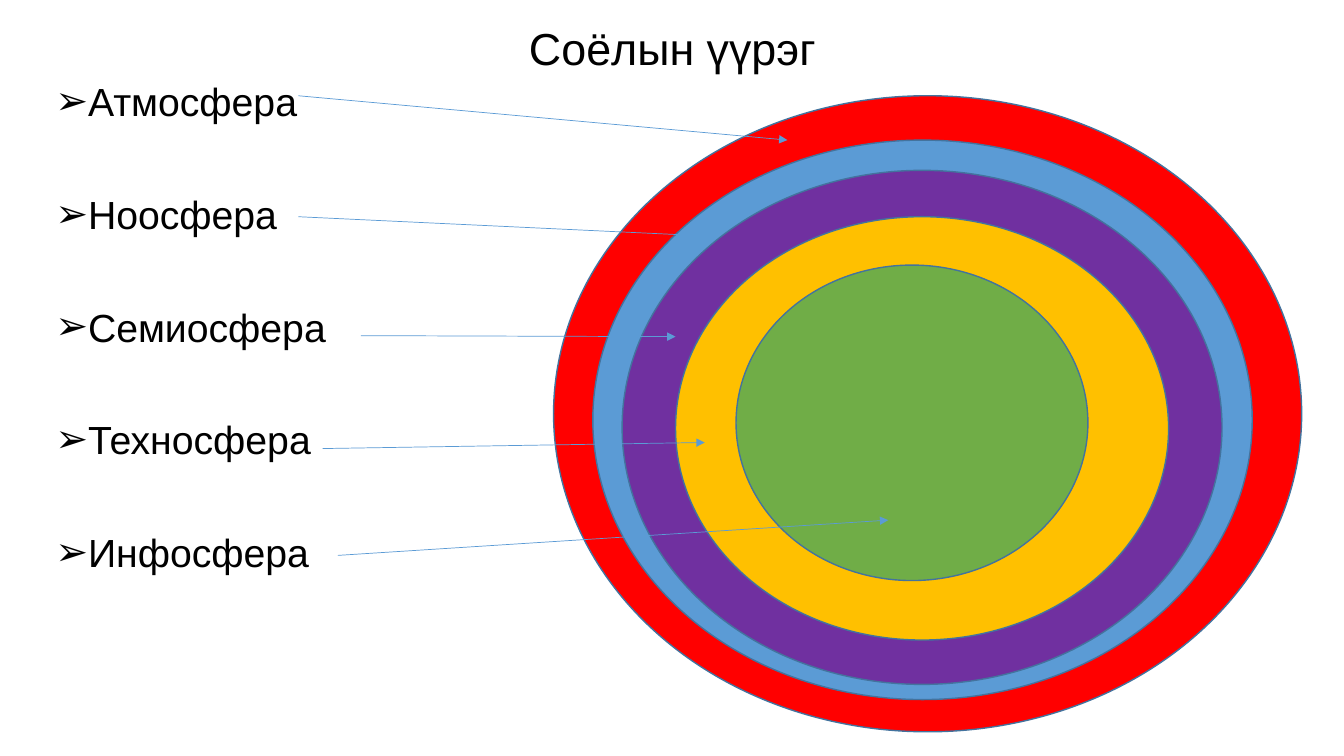
from lxml import etree
from pptx import Presentation
from pptx.dml.color import RGBColor
from pptx.enum.shapes import MSO_CONNECTOR, MSO_SHAPE
from pptx.enum.text import MSO_ANCHOR, PP_ALIGN
from pptx.oxml.ns import qn
from pptx.util import Pt

OVAL = MSO_SHAPE.OVAL
STRAIGHT = MSO_CONNECTOR.STRAIGHT
MIDDLE, TOP = MSO_ANCHOR.MIDDLE, MSO_ANCHOR.TOP
CENTER, LEFT = PP_ALIGN.CENTER, PP_ALIGN.LEFT

EMU_PER_PX = 9144  # 100 px to the inch
FONT = "Arial"
BLACK = RGBColor(0x00, 0x00, 0x00)
RED = RGBColor(0xFF, 0x00, 0x00)
BLUE = RGBColor(0x5B, 0x9B, 0xD5)
PURPLE = RGBColor(0x70, 0x30, 0xA0)
GOLD = RGBColor(0xFF, 0xC0, 0x00)
GREEN = RGBColor(0x70, 0xAD, 0x47)
OUTLINE = RGBColor(0x43, 0x73, 0x9E)

TITLE = "Соёлын үүрэг"
# Name, ring colour, ring box (left, top, width, height), arrow (from x, y, to x, y)
SPHERES = [
    ("Атмосфера", RED, (549, 95, 742, 631), (296, 95, 781, 139)),
    ("Ноосфера", BLUE, (588, 139, 654, 555), (296, 215, 699, 234)),
    ("Семиосфера", PURPLE, (617, 169, 595, 510), (358, 333, 670, 334)),
    ("Техносфера", GOLD, (670, 215, 489, 420), (320, 445, 699, 439)),
    ("Инфосфера", GREEN, (730, 263, 349, 313), (335, 551, 881, 516)),
]


def px(*lengths):
    return [length * EMU_PER_PX for length in lengths]


def format_paragraph(para, size, alignment):
    para.alignment = alignment
    para.font.name = FONT
    para.font.size = Pt(size)
    para.font.color.rgb = BLACK


def set_title(page):
    title = page.shapes.title
    title.left, title.top, title.width, title.height = px(92, 24, 1150, 53)
    frame = title.text_frame
    frame.text = TITLE
    frame.vertical_anchor = MIDDLE
    para = frame.paragraphs[0]
    format_paragraph(para, 32, CENTER)
    para.line_spacing = 0.9


def add_bullet(para):
    properties = para._p.get_or_add_pPr()
    indent, = px(25)
    properties.set("marL", str(indent))
    properties.set("indent", str(-indent))
    etree.SubElement(properties, qn("a:buFont"), typeface=FONT)
    etree.SubElement(properties, qn("a:buChar"), char="➢")


def add_labels(page, names):
    box = page.shapes.add_textbox(*px(45, 77, 500, 666))
    frame = box.text_frame
    frame.word_wrap = True
    frame.vertical_anchor = TOP
    for index, name in enumerate(names):
        para = frame.add_paragraph() if index else frame.paragraphs[0]
        para.text = name
        format_paragraph(para, 28, LEFT)
        para.line_spacing = Pt(30)
        para.space_before = Pt(50.5 if index else 0)
        add_bullet(para)


def add_ring(page, bounds, color):
    ring = page.shapes.add_shape(OVAL, *px(*bounds))
    ring.shadow.inherit = False
    ring.fill.solid()
    ring.fill.fore_color.rgb = color
    ring.line.color.rgb = OUTLINE
    ring.line.width = Pt(1)


def add_arrow(page, ends):
    arrow = page.shapes.add_connector(STRAIGHT, *px(*ends))
    arrow.line.color.rgb = BLUE
    arrow.line.width = Pt(0.5)
    etree.SubElement(arrow.line._get_or_add_ln(), qn("a:tailEnd"), type="triangle")
    etree.SubElement(arrow._element.spPr, qn("a:effectLst"))


def main():
    deck = Presentation()
    deck.slide_width, deck.slide_height = px(1333, 750)
    page = deck.slides.add_slide(deck.slide_layouts[5])

    # Title and list of spheres
    set_title(page)
    add_labels(page, [name for name, *_ in SPHERES])

    # Nested rings, outermost first
    for _, color, bounds, _ in SPHERES:
        add_ring(page, bounds, color)

    # Arrows from the names to the rings
    for *_, ends in SPHERES:
        add_arrow(page, ends)

    deck.save("out.pptx")


if __name__ == "__main__":
    main()
